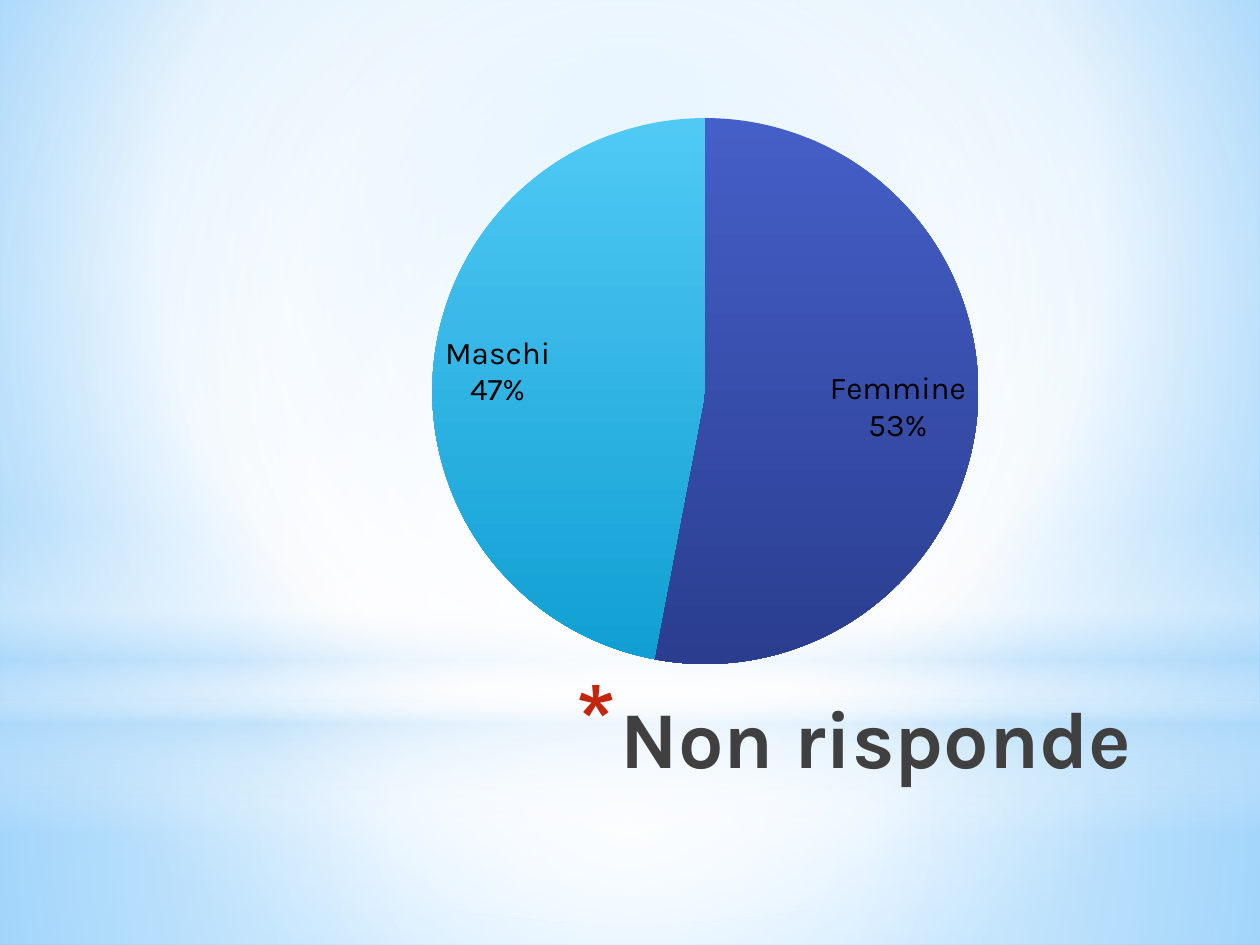
"""Build a slide with a pie chart of respondents by sex over a soft blue backdrop."""
from dataclasses import dataclass
from typing import Optional

from lxml import etree
from pptx import Presentation
from pptx.chart.data import CategoryChartData
from pptx.dml.color import RGBColor
from pptx.enum.chart import XL_CHART_TYPE, XL_LABEL_POSITION
from pptx.enum.shapes import MSO_SHAPE
from pptx.enum.text import MSO_ANCHOR, MSO_AUTO_SIZE, PP_ALIGN
from pptx.oxml import parse_xml
from pptx.oxml.ns import nsdecls, qn
from pptx.util import Cm, Pt

PIE = XL_CHART_TYPE.PIE
BEST_FIT = XL_LABEL_POSITION.BEST_FIT
RECTANGLE, OVAL = MSO_SHAPE.RECTANGLE, MSO_SHAPE.OVAL
TOP, NO_FIT, RIGHT = MSO_ANCHOR.TOP, MSO_AUTO_SIZE.NONE, PP_ALIGN.RIGHT

FONT = "Karla"
BLACK = RGBColor(0x00, 0x00, 0x00)
WHITE = RGBColor(0xFF, 0xFF, 0xFF)
CHARCOAL = RGBColor(0x40, 0x40, 0x40)
RED = RGBColor(0xC3, 0x26, 0x0C)
PALE_BLUE = RGBColor(0xB4, 0xDC, 0xFA)
SKY = RGBColor(0x9E, 0xD5, 0xFF)
DEEP_SKY = RGBColor(0x5B, 0xB9, 0xFF)
INDIGO_LIGHT = RGBColor(0x45, 0x5F, 0xC8)
INDIGO_DARK = RGBColor(0x2A, 0x3D, 0x8F)
CYAN_LIGHT = RGBColor(0x50, 0xC9, 0xF5)
CYAN_DARK = RGBColor(0x11, 0x9F, 0xD3)

WIDTH, HEIGHT, HORIZON = 25.4, 19.05, 14.17
CENTRE = (50, 50, 50, 50)


@dataclass
class Stop:
    position: int
    color: RGBColor
    opacity: int = 100


@dataclass
class Gradient:
    stops: list[Stop]
    focus: Optional[tuple[int, int, int, int]] = None


@dataclass
class Layer:
    shape: int
    top: float
    height: float
    gradient: Gradient


@dataclass
class Slice:
    name: str
    value: int
    gradient: Gradient


BACKGROUND = Gradient([Stop(0, SKY), Stop(60, WHITE), Stop(100, DEEP_SKY)], (20, 10, 20, 60))
LAYERS = [
    Layer(RECTANGLE, HORIZON, HEIGHT - HORIZON, Gradient(
        [Stop(0, WHITE, 91), Stop(37, WHITE, 76), Stop(100, PALE_BLUE, 79)], CENTRE)),
    Layer(RECTANGLE, 0, HORIZON, Gradient(
        [Stop(0, WHITE, 89), Stop(48, WHITE, 62), Stop(100, PALE_BLUE, 79)], CENTRE)),
    Layer(RECTANGLE, 10.46, 6.35, Gradient(
        [Stop(0, WHITE, 0), Stop(29, WHITE, 30), Stop(45, PALE_BLUE, 40),
         Stop(55, WHITE, 26), Stop(65, PALE_BLUE, 60), Stop(100, WHITE, 0)])),
    Layer(OVAL, 4.45, HORIZON, Gradient([Stop(0, WHITE), Stop(56, WHITE, 0)], CENTRE)),
]
SLICES = [
    Slice("Femmine", 53, Gradient([Stop(0, INDIGO_LIGHT), Stop(100, INDIGO_DARK)])),
    Slice("Maschi", 47, Gradient([Stop(0, CYAN_LIGHT), Stop(100, CYAN_DARK)])),
]


def apply_gradient(fill, holder, gradient: Gradient) -> None:
    """Give the holder element of a fill a linear or circular gradient."""
    stops = "".join(
        f'<a:gs pos="{stop.position * 1000}"><a:srgbClr val="{stop.color}">'
        f'<a:alpha val="{stop.opacity * 1000}"/></a:srgbClr></a:gs>'
        for stop in gradient.stops)
    if gradient.focus:
        sides = " ".join(f'{side}="{value * 1000}"' for side, value in zip("ltrb", gradient.focus))
        direction = f'<a:path path="circle"><a:fillToRect {sides}/></a:path>'
    else:
        direction = '<a:lin ang="5400000" scaled="0"/>'
    fill.solid()
    holder.replace(holder.find(qn("a:solidFill")), parse_xml(
        f'<a:gradFill {nsdecls("a")} rotWithShape="1"><a:gsLst>{stops}</a:gsLst>{direction}</a:gradFill>'))


def add_layer(page, layer: Layer) -> None:
    """Draw one full-width backdrop layer."""
    shape = page.shapes.add_shape(layer.shape, 0, Cm(layer.top), Cm(WIDTH), Cm(layer.height))
    shape.shadow.inherit = False
    shape.line.fill.background()
    apply_gradient(shape.fill, shape.element.spPr, layer.gradient)


def write_title(title, text: str) -> None:
    """Place the title with its red asterisk bullet."""
    title.left, title.top, title.width, title.height = Cm(4.98), Cm(13.74), Cm(18.08), Cm(3.18)
    frame = title.text_frame
    frame.text = text
    frame.word_wrap, frame.auto_size, frame.vertical_anchor = True, NO_FIT, TOP
    paragraph = frame.paragraphs[0]
    paragraph.alignment = RIGHT
    properties = paragraph._p.get_or_add_pPr()
    properties.set("marL", str(Cm(0.89)))
    properties.set("indent", str(Cm(-0.89)))
    color = etree.SubElement(properties, qn("a:buClr"))
    etree.SubElement(color, qn("a:srgbClr"), val=str(RED))
    etree.SubElement(properties, qn("a:buSzPct"), val="128000")
    etree.SubElement(properties, qn("a:buChar"), char="*")
    font = paragraph.font
    font.name, font.size, font.bold = FONT, Pt(46), True
    font.color.rgb = CHARCOAL


def add_pie(page, slices: list[Slice]) -> None:
    """Add the pie chart with category and percentage labels."""
    data = CategoryChartData()
    data.categories = [item.name for item in slices]
    data.add_series("Series 1", [item.value for item in slices])
    chart = page.shapes.add_chart(PIE, Cm(3.18), Cm(2.03), Cm(19.89), Cm(11.71), data).chart
    chart.has_title = chart.has_legend = False
    chart.font.name, chart.font.size = FONT, Pt(18)
    chart.font.color.rgb = BLACK
    plot = chart.plots[0]
    plot.vary_by_categories = True
    for index, item in enumerate(slices):
        form = plot.series[0].points[index].format
        form.line.fill.background()
        holder = plot.series[0]._element.findall(qn("c:dPt"))[index].find(qn("c:spPr"))
        apply_gradient(form.fill, holder, item.gradient)
    plot.has_data_labels = True
    labels = plot.data_labels
    labels.show_category_name = labels.show_percentage = True
    labels.show_value = False
    labels.number_format, labels.number_format_is_linked = "0%", False
    labels.position = BEST_FIT
    separator = etree.Element(qn("c:separator"))
    separator.text = "\n"
    labels._element.find(qn("c:showBubbleSize")).addnext(separator)
    area = chart._chartSpace.chart.plotArea
    for old in area.findall(qn("c:layout")):
        area.remove(old)
    area.insert(0, parse_xml(
        f'<c:layout {nsdecls("c")}><c:manualLayout><c:layoutTarget val="inner"/>'
        '<c:xMode val="edge"/><c:yMode val="edge"/><c:x val="0.27"/><c:y val="0.03"/>'
        '<c:w val="0.57"/><c:h val="0.94"/></c:manualLayout></c:layout>'))


def main() -> None:
    """Assemble and save the deck."""
    deck = Presentation()
    deck.slide_width, deck.slide_height = Cm(WIDTH), Cm(HEIGHT)
    page = deck.slides.add_slide(deck.slide_layouts[5])
    fill = page.background.fill
    fill.solid()
    apply_gradient(fill, page.element.find(f'.//{qn("p:bgPr")}'), BACKGROUND)
    for layer in LAYERS:
        add_layer(page, layer)
    title = page.shapes.title
    title.element.getparent().append(title.element)
    write_title(title, "Non risponde")
    add_pie(page, SLICES)
    deck.save("out.pptx")


if __name__ == "__main__":
    main()
